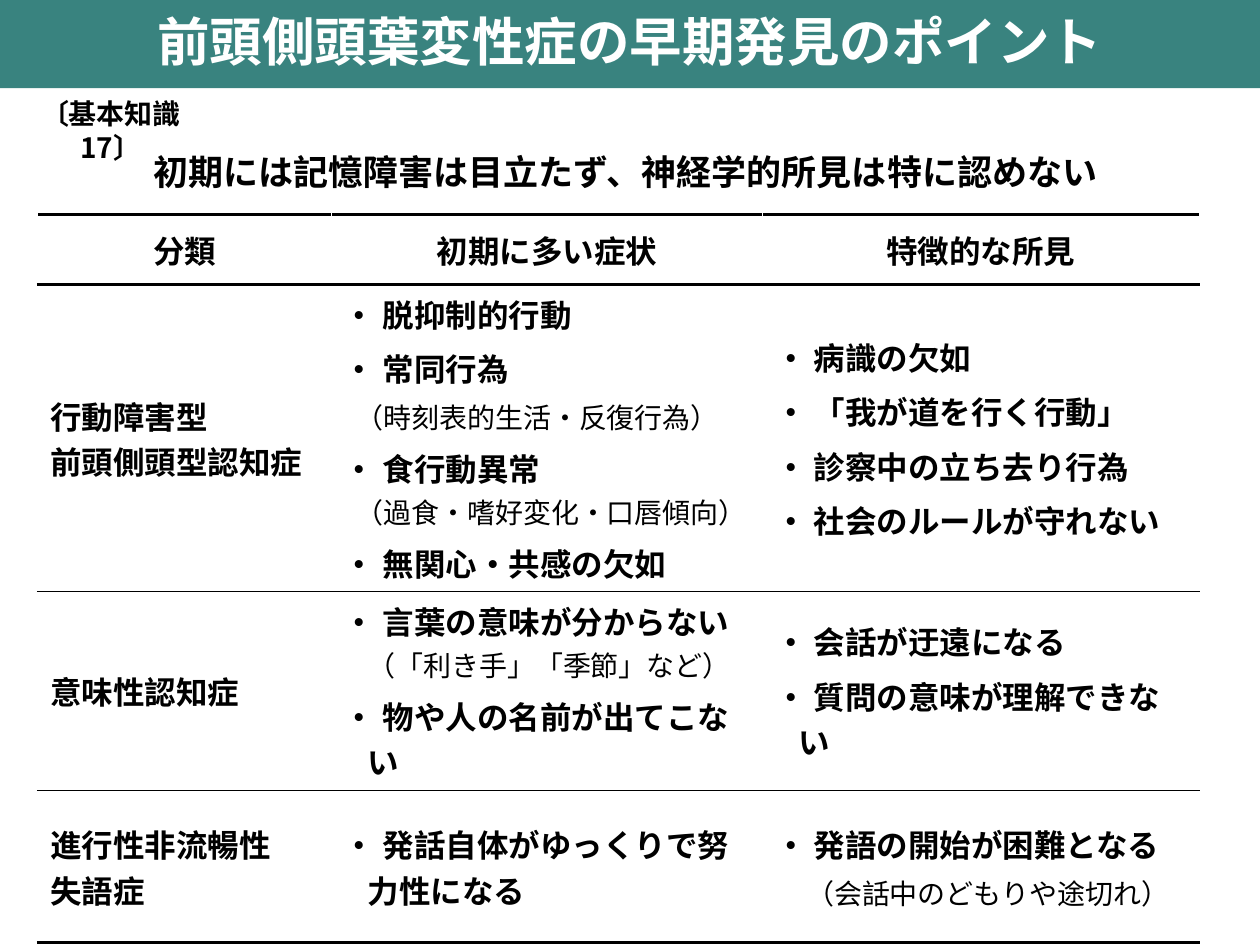
from dataclasses import dataclass

from lxml import etree
from pptx import Presentation, util as u
from pptx.dml.color import RGBColor
from pptx.enum import shapes, text
from pptx.oxml.ns import qn

FONT = "Noto Sans CJK JP"
HUES = {"ink": "000000", "paper": "FFFFFF", "teal": "39837F"}
MID = text.PP_ALIGN.CENTER


@dataclass
class Line:
    """One paragraph; left and first are indents in cm, tail is a light run."""
    words: str
    size: int = 18
    bold: bool = True
    gap: int = 0
    left: float = 0
    first: float = 0
    align: text.PP_ALIGN = text.PP_ALIGN.LEFT
    hue: str = "ink"
    tail: str = ""
    pitch: int = 0


@dataclass
class Box:
    left: float
    top: float
    width: float
    height: float

    def place(self) -> list:
        return [u.Cm(n) for n in (self.left, self.top, self.width, self.height)]


def point(words: str, tail: str = "") -> Line:
    return Line("・ " + words, gap=5, left=0.48, first=-0.48, tail=tail)


def flat(words: str) -> Line:
    return Line("・ " + words, gap=5)


def note(words: str, left: float, gap: int = 0) -> Line:
    return Line(words, size=16, bold=False, left=left, gap=gap)


def write(frame, lines: list[Line]) -> None:
    frame.word_wrap = True
    for i, line in enumerate(lines):
        para = frame.add_paragraph() if i else frame.paragraphs[0]
        para.alignment = line.align
        if i and line.gap:
            para.space_before = u.Pt(line.gap)
        if line.pitch:
            para.line_spacing = u.Pt(line.pitch)
        props = para._p.get_or_add_pPr()
        props.set("marL", str(u.Cm(line.left)))
        props.set("indent", str(u.Cm(line.first)))
        font = para.font
        font.size, font.bold, font.name = u.Pt(line.size), line.bold, FONT
        font.color.rgb = RGBColor.from_string(HUES[line.hue])
        etree.SubElement(props.find(qn("a:defRPr")), qn("a:ea"), typeface=FONT)
        para.add_run().text = line.words
        if line.tail:
            run = para.add_run()
            run.text = line.tail
            run.font.size, run.font.bold = u.Pt(16), False


def edge(cell, side: str, hue: str, width: float) -> None:
    """Add a border; side is L, R, T or B."""
    line = etree.SubElement(cell._tc.get_or_add_tcPr(), qn("a:ln" + side),
                            w=str(u.Pt(width)))
    fill = etree.SubElement(line, qn("a:solidFill"))
    etree.SubElement(fill, qn("a:srgbClr"), val=HUES[hue])


def label(slide, box: Box, line: Line, anchor=text.MSO_ANCHOR.TOP) -> None:
    frame = slide.shapes.add_textbox(*box.place()).text_frame
    frame.vertical_anchor = anchor
    write(frame, [line])


def banner(slide, box: Box) -> None:
    rect = slide.shapes.add_shape(shapes.MSO_SHAPE.RECTANGLE, *box.place())
    rect.shadow.inherit = False
    rect.fill.solid()
    rect.fill.fore_color.rgb = RGBColor.from_string(HUES["teal"])
    rect.line.fill.background()


def grid(slide, box: Box, cols: list[float], rows: list[float],
         rules: list[float], cells: list[list[list[Line]]]) -> None:
    """Draw the table; rules are the widths of its horizontal lines."""
    table = slide.shapes.add_table(len(rows), len(cols), *box.place()).table
    table.first_row = table.horz_banding = False
    for col, width in zip(table.columns, cols):
        col.width = u.Cm(width)
    for r, row in enumerate(cells):
        table.rows[r].height = u.Cm(rows[r])
        for c, lines in enumerate(row):
            cell = table.cell(r, c)
            cell.vertical_anchor = text.MSO_ANCHOR.MIDDLE
            write(cell.text_frame, lines)
            edge(cell, "L", "paper", 1)
            edge(cell, "R", "paper", 1)
            edge(cell, "T", "ink", rules[r])
            edge(cell, "B", "ink", rules[r + 1])
            cell.fill.background()


CELLS = [
    [[Line(head, align=MID)]
     for head in ("分類", "初期に多い症状", "特徴的な所見")],
    [
        [Line("行動障害型"), Line("前頭側頭型認知症")],
        [point("脱抑制的行動"), point("常同行為"),
         note("（時刻表的生活・反復行為）", 0.24, 3),
         point("食行動異常"),
         note("（過食・嗜好変化・口唇傾向）", 0.24),
         point("無関心・共感の欠如")],
        [flat("病識の欠如"), flat("「我が道を行く行動」"),
         flat("診察中の立ち去り行為"), flat("社会のルールが守れない")],
    ],
    [
        [Line("意味性認知症")],
        [point("言葉の意味が分からない", "（「利き手」「季節」など）"),
         point("物や人の名前が出てこない")],
        [point("会話が迂遠になる"), point("質問の意味が理解できない")],
    ],
    [
        [Line("進行性非流暢性"), Line("失語症")],
        [point("発話自体がゆっくりで努力性になる")],
        [flat("発語の開始が困難となる"),
         note("（会話中のどもりや途切れ）", 0.63, 3)],
    ],
]


def main() -> None:
    deck = Presentation()
    deck.slide_width, deck.slide_height = u.Cm(25.4), u.Cm(19.05)
    slide = deck.slides.add_slide(deck.slide_layouts[6])
    grid(slide, Box(0.76, 4.32, 23.42, 13.86), [5.92, 8.69, 8.81],
         [1.42, 5.94, 3.43, 3.07], [2.25, 2.25, 0.75, 0.75, 2.25], CELLS)
    label(slide, Box(1.22, 2.9, 22.78, 1.12),
          Line("初期には記憶障害は目立たず、神経学的所見は特に認めない",
               size=20, align=MID))
    banner(slide, Box(0, -0.2, 25.4, 1.98))
    label(slide, Box(0.43, -0.18, 24.54, 1.85),
          Line("前頭側頭葉変性症の早期発見のポイント", size=30, align=MID,
               hue="paper", pitch=40), text.MSO_ANCHOR.MIDDLE)
    label(slide, Box(0, 1.83, 4.47, 0.94),
          Line("〔基本知識17〕", size=16, align=MID))
    deck.save("out.pptx")


if __name__ == "__main__":
    main()
